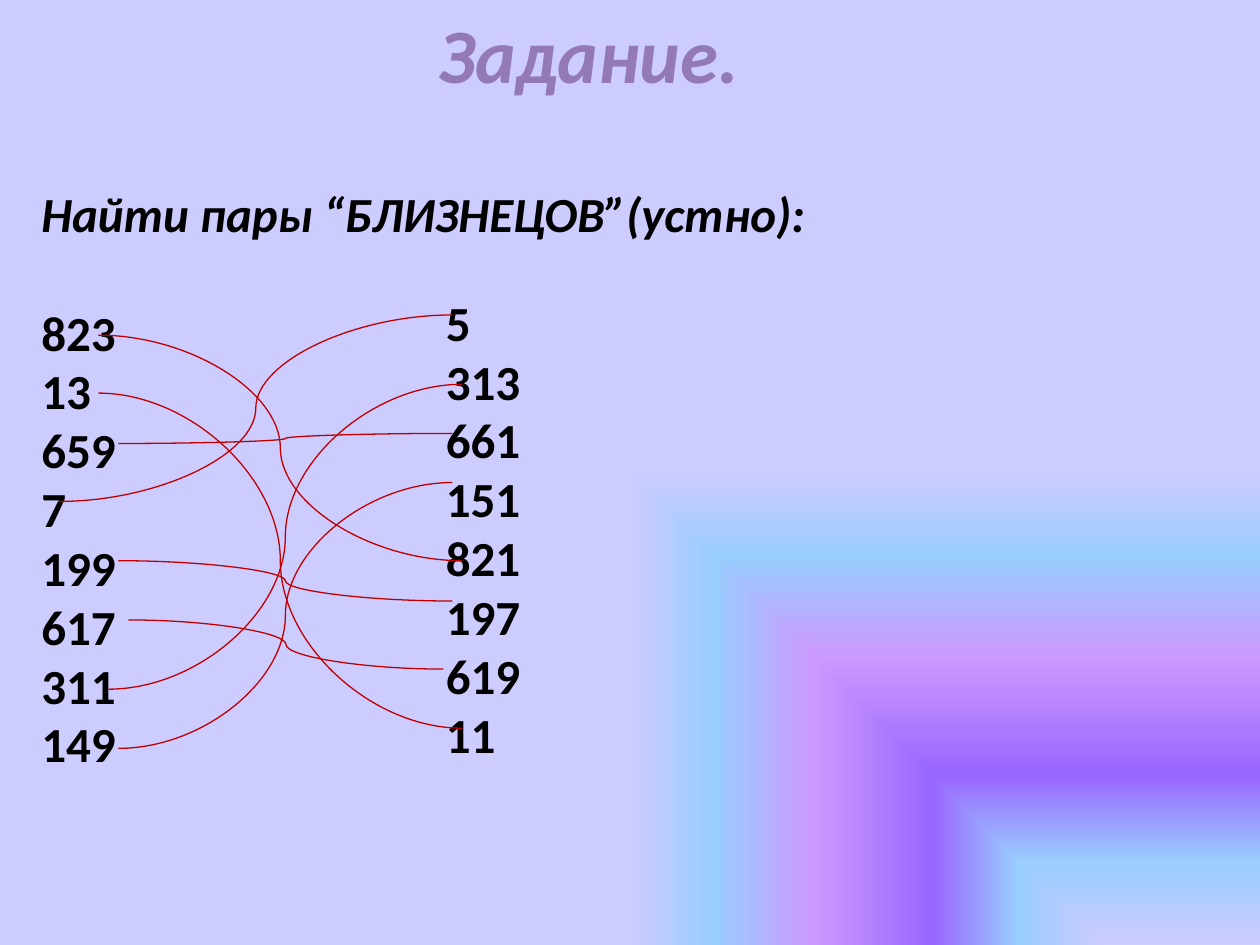
from dataclasses import dataclass

from lxml import etree
from pptx import Presentation
from pptx.dml.color import RGBColor
from pptx.enum.shapes import MSO_CONNECTOR as Conn
from pptx.enum.text import MSO_AUTO_SIZE as AutoSize, PP_ALIGN as Align
from pptx.oxml import parse_xml
from pptx.oxml.ns import nsdecls, qn
from pptx.util import Inches, Pt

FONT = "Calibri"
BLACK, RED = "000000", "C00000"
BACKGROUND = [(0, "CCCCFF"), (18, "99CCFF"), (36, "9966FF"),
              (61, "CC99FF"), (82, "99CCFF"), (100, "CCCCFF")]
TITLE_STOPS = [(0, "B099D2"), (40, "9379B5"), (50, "9379B5"),
               (68, "9379B5"), (100, "B099D2")]
CORNER = ('<a:path path="rect"><a:fillToRect l="100000" t="100000"/></a:path>')
DOWNWARD = '<a:lin ang="5400000" scaled="0"/>'


@dataclass
class Link:
    """Curve from a number on the left to its twin on the right."""
    x1: float
    y1: float
    x2: float
    y2: float


LEFT = ["823", "13", "659", "7", "199", "617", "311", "149"]
RIGHT = ["5", "313", "661", "151", "821", "197", "619", "11"]
LINKS = [
    Link(0.78, 2.66, 3.67, 4.45),
    Link(0.78, 3.12, 3.67, 5.78),
    Link(0.47, 3.98, 3.59, 2.5),
    Link(0.94, 3.52, 3.59, 3.44),
    Link(0.94, 4.45, 3.59, 4.77),
    Link(1.02, 4.92, 3.52, 5.31),
    Link(0.86, 5.47, 3.67, 3.05),
    Link(0.94, 5.94, 3.59, 3.83),
]


def color(value: str) -> RGBColor:
    return RGBColor.from_string(value)


def gradient(stops: list, direction: str):
    marks = "".join(f'<a:gs pos="{pos * 1000}"><a:srgbClr val="{value}"/></a:gs>'
                    for pos, value in stops)
    return parse_xml(f'<a:gradFill {nsdecls("a")} rotWithShape="1">'
                     f'<a:gsLst>{marks}</a:gsLst>{direction}</a:gradFill>')


def replace_gradient(parent, stops: list, direction: str) -> None:
    parent.replace(parent.find(qn("a:gradFill")), gradient(stops, direction))


def add_text(s, box: tuple, lines: list, size: int, wrap: bool = True):
    tf = s.shapes.add_textbox(*map(Inches, box)).text_frame
    tf.word_wrap = wrap
    tf.auto_size = AutoSize.NONE
    tf.text = "\n".join(lines)
    for p in tf.paragraphs:
        font = p.runs[0].font
        font.name, font.size, font.bold = FONT, Pt(size), True
        font.color.rgb = color(BLACK)
    return tf


def add_link(s, link: Link) -> None:
    line = s.shapes.add_connector(Conn.CURVE, Inches(link.x1), Inches(link.y1),
                                  Inches(link.x2), Inches(link.y2))
    line.line.color.rgb = color(RED)
    line.line.width = Pt(0.75)
    etree.SubElement(line.element.spPr, qn("a:effectLst"))


def main() -> None:
    prs = Presentation()
    prs.slide_width, prs.slide_height = Inches(10), Inches(7.5)
    s = prs.slides.add_slide(prs.slide_layouts[6])

    # Background
    s.background.fill.gradient()
    bg = s.element.find(".//" + qn("p:bgPr"))
    replace_gradient(bg, BACKGROUND, CORNER)

    # Title
    tf = add_text(s, (3.37, 0, 2.61, 0.84), ["Задание."], 44, wrap=False)
    p = tf.paragraphs[0]
    p.alignment = Align.CENTER
    r = p.runs[0]
    r.font.italic = True
    r.font.fill.gradient()
    replace_gradient(r.font.fill._xPr, TITLE_STOPS, DOWNWARD)

    # Task and the two columns of numbers
    task = "Найти пары “БЛИЗНЕЦОВ”(устно):"
    tf = add_text(s, (0.23, 1.41, 8.67, 5.72), [task, *LEFT], 28)
    tf.paragraphs[0].runs[0].font.italic = True
    tf.paragraphs[1].space_before = Pt(34)
    add_text(s, (3.44, 2.27, 3.59, 3.87), RIGHT, 28)

    # Curves joining the twins
    for link in LINKS:
        add_link(s, link)

    prs.save("out.pptx")


if __name__ == "__main__":
    main()
